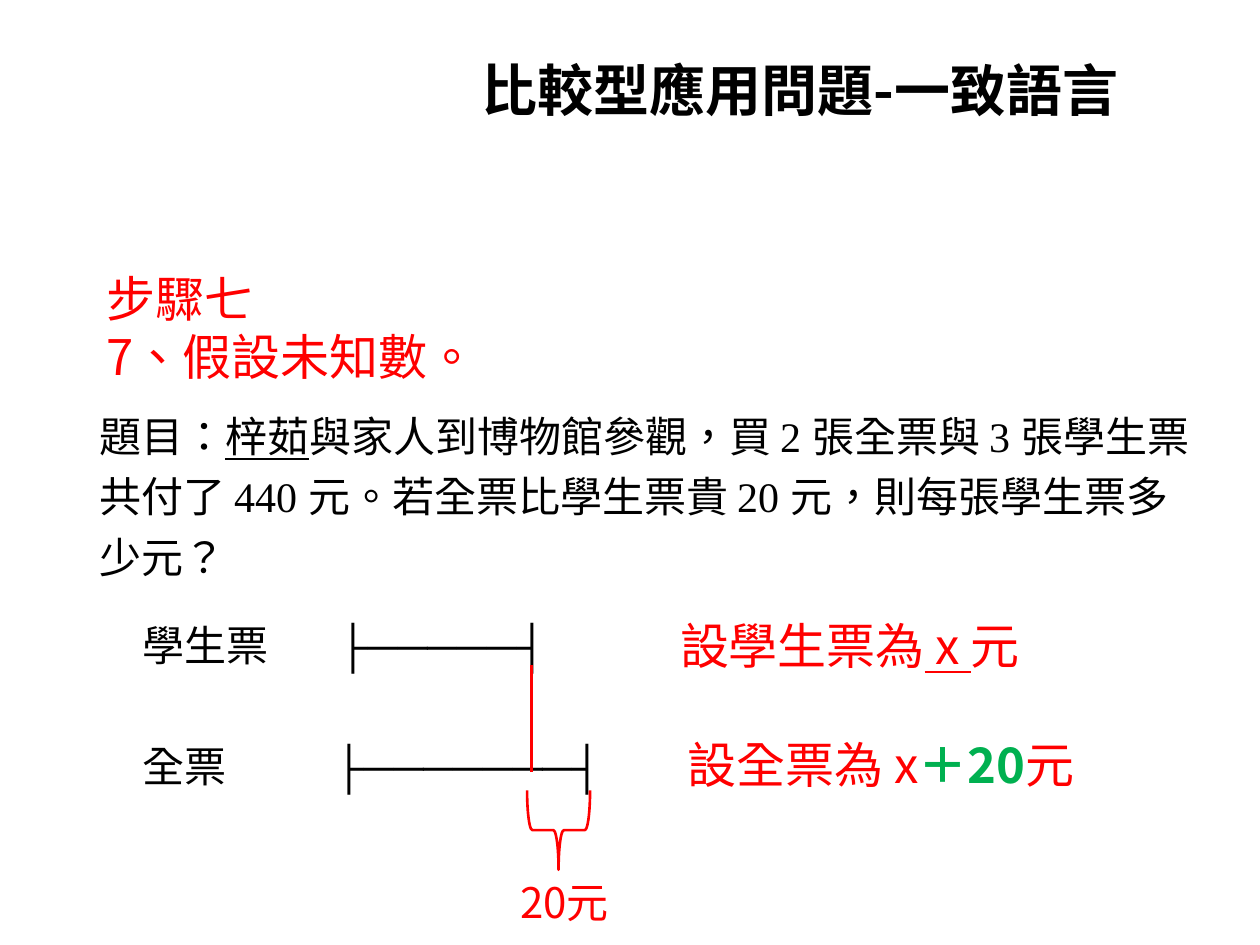
from lxml import etree
from pptx import Presentation
from pptx.dml.color import RGBColor
from pptx.enum.shapes import MSO_CONNECTOR, MSO_SHAPE
from pptx.enum.text import MSO_ANCHOR, MSO_AUTO_SIZE, PP_ALIGN
from pptx.oxml.ns import qn
from pptx.util import Cm, Pt

LINE, BRACE = MSO_CONNECTOR.STRAIGHT, MSO_SHAPE.RIGHT_BRACE
TOP, MID, LEFT = MSO_ANCHOR.TOP, MSO_ANCHOR.MIDDLE, PP_ALIGN.LEFT
GROW = MSO_AUTO_SIZE.SHAPE_TO_FIT_TEXT


class Theme:
    sans, serif = "Noto Sans CJK SC", "Times New Roman"
    black, red, green = "000000", "FF0000", "00B050"
    title, step, text = 32, 28, 24
    stroke = 1.5


# A paragraph is a list of runs: (text, changes to the format)
TITLE = [[("比較型應用問題-一致語言", {"bold": True})]]
STEP = [[("步驟七", {})], [("7、假設未知數。", {})]]
PROBLEM = [
    [("題目：", {}), ("梓茹", {"under": True}),
     ("與家人到博物館參觀，買 2 張全票與 3 張學生票", {})],
    [("共付了 440 元。若全票比學生票貴 20 元，則每張學生票多少元？", {})],
]
# Label, label width, bar, bar left, bar width
TICKETS = [
    ("學生票", 3.28, "├─────┤", 6.58, 7.11),
    ("全票", 2.64, "├───────┤", 6.5, 9.53),
]
ANSWERS = [
    (13.46, 12.29, [("設學生票為", {}), (" x ", {"under": True}), ("元", {})]),
    (13.61, 14.68, [("設全票為 x", {}),
                    ("＋20", {"color": Theme.green, "bold": True}),
                    ("元", {})]),
]
ROW_TOP, ROW_GAP, ROW_HIGH = 12.37, 2.44, 1.27


def style(run, size, font, east, color, bold=False, under=False):
    """Format a run; east is the font for Chinese characters."""
    face = run.font
    face.size, face.name = Pt(size), font
    face.bold, face.underline = bold, under
    face.color.rgb = RGBColor.from_string(color)
    props = run._r.get_or_add_rPr()
    props.set("lang", "zh-TW")
    etree.SubElement(props, qn("a:ea")).set("typeface", east)


def write(slide, paras, box, holder=None, size=Theme.text, font=Theme.sans,
          east=Theme.sans, color=Theme.black, anchor=TOP, space=1.0):
    """Fill the holder, or a new text box, with formatted paragraphs."""
    left, top, width, height = (Cm(n) for n in box)
    shape = holder or slide.shapes.add_textbox(left, top, width, height)
    shape.left, shape.top, shape.width, shape.height = left, top, width, height
    frame = shape.text_frame
    frame.word_wrap, frame.auto_size = True, GROW
    frame.vertical_anchor = anchor
    for i, runs in enumerate(paras):
        para = frame.add_paragraph() if i else frame.paragraphs[0]
        para.alignment, para.line_spacing = LEFT, space
        para.space_before = para.space_after = Pt(0)
        props = para._p.get_or_add_pPr()
        props.set("marL", "0")
        props.set("indent", "0")
        etree.SubElement(props, qn("a:buNone"))
        for text, change in runs:
            run = para.add_run()
            run.text = text
            style(run, **{"size": size, "font": font, "east": east,
                          "color": color, **change})


def stroke(shape):
    shape.line.color.rgb = RGBColor.from_string(Theme.red)
    shape.line.width = Pt(Theme.stroke)


def mark_gap(slide):
    """Show how much more the full ticket costs."""
    line = slide.shapes.add_connector(
        LINE, Cm(10.72), Cm(13.41), Cm(10.72), Cm(15.57))
    stroke(line)
    etree.SubElement(line._element.spPr, qn("a:effectLst"))
    brace = slide.shapes.add_shape(
        BRACE, Cm(10.46), Cm(16.1), Cm(1.6), Cm(1.27))
    brace.rotation = 90
    brace.shadow.inherit = False
    brace.fill.background()
    stroke(brace)
    write(slide, [[("20元", {})]], (10.24, 17.55, 3, ROW_HIGH),
          color=Theme.red)


def main():
    deck = Presentation()
    deck.slide_width, deck.slide_height = Cm(25.4), Cm(19.05)
    slide = deck.slides.add_slide(deck.slide_layouts[1])
    title, body = slide.placeholders
    write(slide, PROBLEM, (1.75, 7.92, 22.6, 3.96), holder=body,
          font=Theme.serif, anchor=MID, space=1.2)
    write(slide, TITLE, (9.45, 0.99, 13.61, 1.63), holder=title,
          size=Theme.title)
    write(slide, STEP, (1.9, 5.28, 21.41, 2.64), size=Theme.step,
          color=Theme.red)
    for i, (name, wide, bar, left, span) in enumerate(TICKETS):
        top = ROW_TOP + i * ROW_GAP
        write(slide, [[(name, {})]], (2.62, top, wide, ROW_HIGH))
        write(slide, [[(bar, {})]], (left, top, span, ROW_HIGH),
              font=Theme.serif, east=Theme.serif)
    mark_gap(slide)
    for left, top, runs in ANSWERS:
        write(slide, [runs], (left, top, 8.71, 1.45), size=Theme.step,
              color=Theme.red)
    deck.save("out.pptx")


if __name__ == "__main__":
    main()
